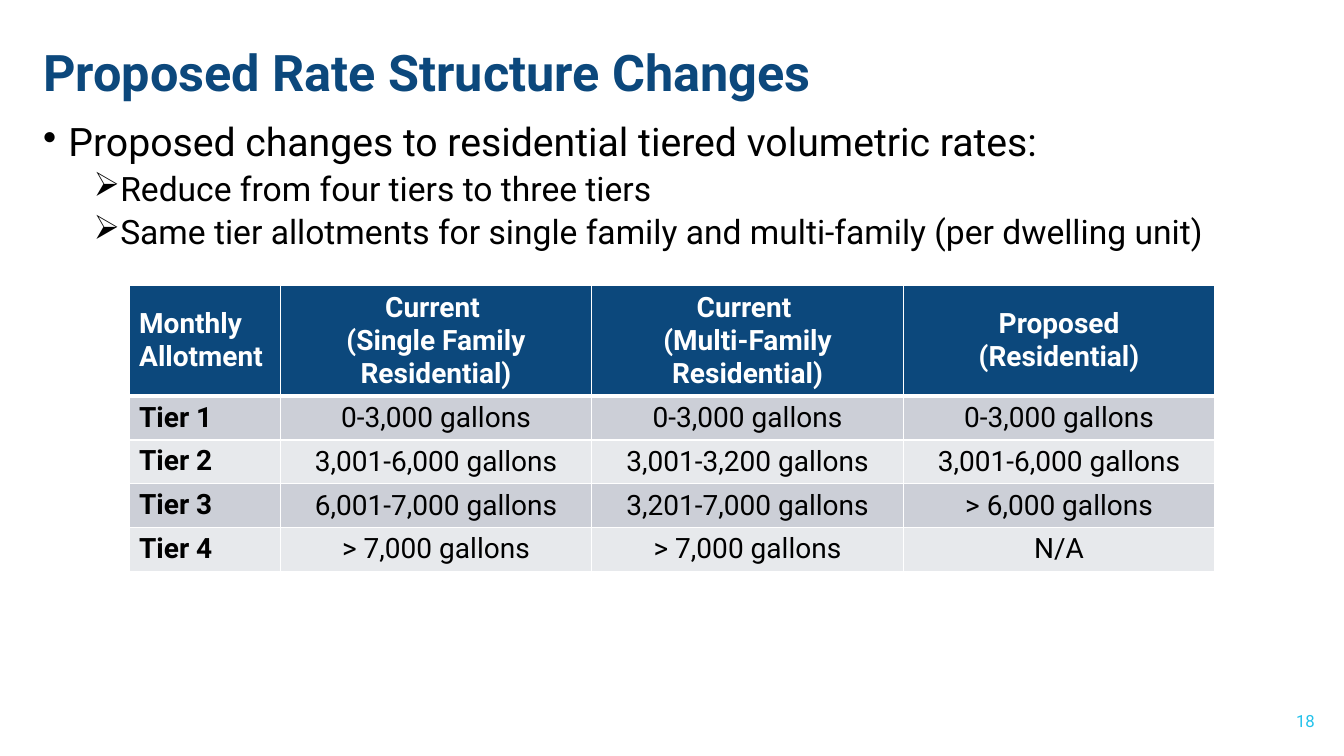
import dataclasses

import lxml.etree
import pptx
import pptx.dml.color
import pptx.enum.text
import pptx.oxml.ns
import pptx.util

FONT = "Roboto"
NAVY, BLACK, WHITE, CYAN = "0C487C", "000000", "FFFFFF", "24C2EB"
BANDS = ("CCCFD7", "E7E9EC")
LEFT = pptx.enum.text.PP_ALIGN.LEFT
CENTER = pptx.enum.text.PP_ALIGN.CENTER
RIGHT = pptx.enum.text.PP_ALIGN.RIGHT
TOP = pptx.enum.text.MSO_ANCHOR.TOP
MIDDLE = pptx.enum.text.MSO_ANCHOR.MIDDLE
Inches = pptx.util.Inches


@dataclasses.dataclass(frozen=True)
class Para:
    text: str
    size: int
    color: str = BLACK
    bold: bool = False
    align: pptx.enum.text.PP_ALIGN = LEFT
    line: float = 1.0
    before: int = 0
    bullet: str = ""
    indent: float = 0.0
    level: int = 0


@dataclasses.dataclass(frozen=True)
class Box:
    left: float
    top: float
    width: float
    height: float
    anchor: pptx.enum.text.MSO_ANCHOR
    paras: tuple[Para, ...]


BOXES = (
    Box(0.33, 0.4, 12.8, 0.7, MIDDLE,
        (Para("Proposed Rate Structure Changes", 36, NAVY, True, line=0.9),)),
    Box(0.33, 1.17, 12.8, 1.5, TOP, (
        Para("Proposed changes to residential tiered volumetric rates:", 28,
             line=0.9, bullet="•", indent=0.25),
        Para("Reduce from four tiers to three tiers", 24,
             line=0.9, before=5, bullet="➢", indent=0.75, level=1),
        Para("Same tier allotments for single family and multi-family (per dwelling unit)", 24,
             line=0.9, before=5, bullet="➢", indent=0.75, level=1),
    )),
    Box(10.14, 6.95, 3, 0.4, MIDDLE, (Para("18", 12, CYAN, align=RIGHT),)),
)

COLUMN_WIDTHS = (1.5, 3.09, 3.09, 3.09)
ROW_HEIGHTS = (1.07, 0.43, 0.43, 0.43, 0.43)
ALLOTMENTS = (
    ("Monthly Allotment", "Current \n(Single Family Residential)",
     "Current \n(Multi-Family Residential)", "Proposed\n(Residential)"),
    ("Tier 1", "0-3,000 gallons", "0-3,000 gallons", "0-3,000 gallons"),
    ("Tier 2", "3,001-6,000 gallons", "3,001-3,200 gallons", "3,001-6,000 gallons"),
    ("Tier 3", "6,001-7,000 gallons", "3,201-7,000 gallons", "> 6,000 gallons"),
    ("Tier 4", "> 7,000 gallons", "> 7,000 gallons", "N/A"),
)


def rgb(color: str) -> pptx.dml.color.RGBColor:
    return pptx.dml.color.RGBColor.from_string(color)


def add_element(parent, tag: str, **attrs: str):
    return lxml.etree.SubElement(parent, pptx.oxml.ns.qn(tag), attrs)


def write(tf, paras: tuple[Para, ...]) -> None:
    for i, para in enumerate(paras):
        p = tf.paragraphs[0] if i == 0 else tf.add_paragraph()
        p.alignment = para.align
        p.level = para.level
        p.line_spacing = para.line
        p.space_before = pptx.util.Pt(para.before)
        if para.bullet:
            pPr = p._p.get_or_add_pPr()
            pPr.set("marL", str(Inches(para.indent)))
            pPr.set("indent", str(Inches(-0.25)))
            add_element(pPr, "a:buChar", char=para.bullet)
        r = p.add_run()
        r.text = para.text
        r.font.name = FONT
        r.font.size = pptx.util.Pt(para.size)
        r.font.bold = para.bold
        r.font.color.rgb = rgb(para.color)


def add_box(s, box: Box) -> None:
    sp = s.shapes.add_textbox(*map(Inches, (box.left, box.top, box.width, box.height)))
    tf = sp.text_frame
    tf.word_wrap = True
    tf.vertical_anchor = box.anchor
    write(tf, box.paras)


def set_borders(cell, top: int, bottom: int) -> None:
    tcPr = cell._tc.get_or_add_tcPr()
    for side, width in (("L", 1), ("R", 1), ("T", top), ("B", bottom)):
        ln = add_element(tcPr, f"a:ln{side}", w=str(pptx.util.Pt(width)))
        add_element(add_element(ln, "a:solidFill"), "a:srgbClr", val=WHITE)


def add_allotments(s) -> None:
    sp = s.shapes.add_table(len(ROW_HEIGHTS), len(COLUMN_WIDTHS), Inches(1.28), Inches(2.83),
                            Inches(sum(COLUMN_WIDTHS)), Inches(sum(ROW_HEIGHTS)))
    table = sp.table
    for column, width in zip(table.columns, COLUMN_WIDTHS):
        column.width = Inches(width)
    for i, (height, texts) in enumerate(zip(ROW_HEIGHTS, ALLOTMENTS)):
        table.rows[i].height = Inches(height)
        header = i == 0
        for j, text in enumerate(texts):
            cell = table.cell(i, j)
            set_borders(cell, 3 if i == 1 else 1, 3 if header else 1)
            cell.fill.solid()
            cell.fill.fore_color.rgb = rgb(NAVY if header else BANDS[(i - 1) % 2])
            cell.vertical_anchor = MIDDLE
            write(cell.text_frame, tuple(
                Para(part, 20, WHITE if header else BLACK, header or j == 0,
                     LEFT if j == 0 else CENTER, 0.9 if j == 0 and not header else 1.0)
                for part in text.split("\n")))


def main() -> None:
    prs = pptx.Presentation()
    prs.slide_width, prs.slide_height = Inches(13.33), Inches(7.5)
    s = prs.slides.add_slide(prs.slide_layouts[6])
    for box in BOXES:
        add_box(s, box)
    add_allotments(s)
    prs.save("out.pptx")


if __name__ == "__main__":
    main()
